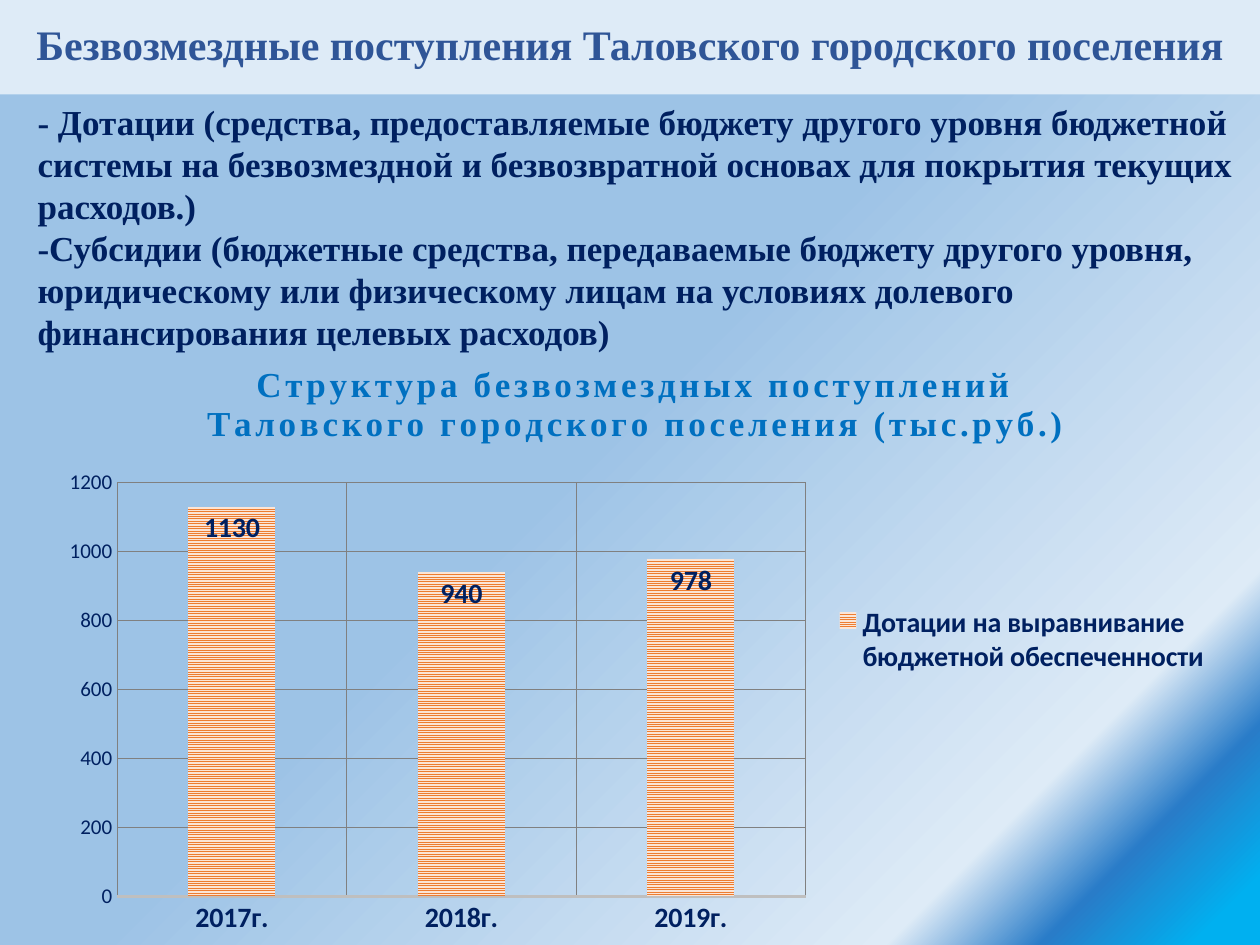
"""Build the slide on grants received by the Talovskoye town settlement."""
from lxml.etree import SubElement as Sub
from pptx import Presentation
from pptx.chart.data import CategoryChartData as Data
from pptx.dml.color import RGBColor as RGB
from pptx.enum.chart import XL_CHART_TYPE as Kind, XL_LABEL_POSITION as Spot
from pptx.enum.chart import XL_LEGEND_POSITION as Side, XL_TICK_MARK as Tick
from pptx.enum.dml import MSO_PATTERN_TYPE as Pat
from pptx.enum.text import MSO_ANCHOR as Anchor, PP_ALIGN as Align
from pptx.oxml import parse_xml
from pptx.oxml.ns import nsdecls, qn
from pptx.util import Inches, Pt

HEAD = "Безвозмездные поступления Таловского городского поселения"
TERMS = [
    "- Дотации (средства, предоставляемые бюджету другого уровня бюджетной системы "
    "на безвозмездной и безвозвратной основах для покрытия текущих расходов.)",
    "-Субсидии (бюджетные средства, передаваемые бюджету другого уровня, "
    "юридическому или физическому лицам на условиях долевого финансирования "
    "целевых расходов)",
]
CAPTION = ("Структура безвозмездных поступлений Таловского городского поселения "
           "(тыс.руб.)")
YEARS = ["2017г.", "2018г.", "2019г."]
SERIES = "Дотации на выравнивание бюджетной обеспеченности"
SUMS = [1130, 940, 978]
HUES = {"band": "DEEBF7", "head": "2F5597", "navy": "002060", "title": "0070C0",
        "bar": "ED7D31", "pale": "FBE5D6", "grid": "808080", "axis": "BFBFBF",
        "black": "000000"}
STOPS = [(3, "00B0F0"), (10, "297CC8"), (17, "DEEBF7"), (53, "9DC3E6"),
         (96, "9DC3E6")]
PLOT = {"x": 0.06, "y": 0.24, "w": 0.585, "h": 0.68}
SERIF, SANS = "Times New Roman", "Calibri"


def hue(key):
    return RGB.from_string(HUES[key])


def style(font, size, key="navy", face=SANS, bold=False):
    font.size, font.name, font.bold = Pt(size), face, bold
    font.color.rgb = hue(key)


def write(frame, text, align=Align.LEFT, space=None, **look):
    frame.word_wrap = True
    para = frame.paragraphs[0]
    para.text, para.alignment, para.line_spacing = text, align, space
    for run in para.runs:
        style(run.font, **look)


def place(shape, *box):
    shape.left, shape.top, shape.width, shape.height = map(Inches, box)


def rule(line, key, width):
    line.color.rgb, line.width = hue(key), Pt(width)


def paint(slide):
    slide.background.fill.solid()
    old = slide.background.fill._xPr.find(qn("a:solidFill"))
    stops = "".join(f'<a:gs pos="{pos * 1000}"><a:srgbClr val="{val}"/></a:gs>'
                    for pos, val in STOPS)
    new = parse_xml(f'<a:gradFill {nsdecls("a")}><a:gsLst>{stops}</a:gsLst>'
                    '<a:lin ang="13500000" scaled="0"/></a:gradFill>')
    old.getparent().replace(old, new)


def fix(plot):
    area = plot._element.getparent()
    for old in area.findall(qn("c:layout")):
        area.remove(old)
    layout = parse_xml(f'<c:layout {nsdecls("c")}/>')
    manual = Sub(layout, qn("c:manualLayout"))
    parts = {"layoutTarget": "inner", "xMode": "edge", "yMode": "edge", **PLOT}
    for tag, val in parts.items():
        Sub(manual, qn(f"c:{tag}")).set("val", str(val))
    area.insert(0, layout)


def draw(slide):
    data = Data()
    data.categories = YEARS
    data.add_series(SERIES, SUMS)
    box = map(Inches, (0.37, 2.67, 9.34, 4.83))
    chart = slide.shapes.add_chart(Kind.COLUMN_CLUSTERED, *box, data).chart
    style(chart.font, 10, "black")
    chart.has_title = True
    title = chart.chart_title
    write(title.text_frame, CAPTION, align=Align.CENTER, size=20, key="title",
          face=SERIF, bold=True)
    title.text_frame.paragraphs[0].runs[0].font._element.set("spc", "200")
    title.include_in_layout = False

    chart.has_legend = True
    chart.legend.position = Side.RIGHT
    chart.legend.include_in_layout = False
    style(chart.legend.font, 16, bold=True)

    cat, val = chart.category_axis, chart.value_axis
    for axis, size, bold in ((cat, 16, True), (val, 12, False)):
        axis.major_tick_mark = axis.minor_tick_mark = Tick.NONE
        axis.has_major_gridlines = True
        rule(axis.major_gridlines.format.line, "grid", 0.75)
        style(axis.tick_labels.font, size, bold=bold)
    rule(cat.format.line, "axis", 1.5)
    val.format.line.fill.background()
    val.minimum_scale, val.maximum_scale, val.major_unit = 0, 1200, 200

    plot = chart.plots[0]
    plot.gap_width, plot.overlap, plot.vary_by_categories = 164, -22, False
    fix(plot)
    bars = plot.series[0]
    fill = bars.format.fill
    fill.patterned()
    fill.pattern = Pat.NARROW_HORIZONTAL
    fill.fore_color.rgb, fill.back_color.rgb = hue("bar"), hue("pale")
    labels = bars.data_labels
    labels.show_value, labels.position = True, Spot.INSIDE_END
    style(labels.font, 16, bold=True)


def main():
    deck = Presentation()
    deck.slide_width, deck.slide_height = Inches(10), Inches(7.5)
    slide = deck.slides.add_slide(deck.slide_layouts[5])
    paint(slide)

    head = slide.shapes.title
    place(head, 0, 0, 10, 0.75)
    head.fill.solid()
    head.fill.fore_color.rgb = hue("band")
    head.text_frame.vertical_anchor = Anchor.MIDDLE
    write(head.text_frame, HEAD, align=Align.CENTER, space=0.9, size=24,
          key="head", face=SERIF, bold=True)

    body = slide.shapes.add_textbox(*map(Inches, (0.2, 0.75, 9.8, 2.12)))
    write(body.text_frame, "\v".join(TERMS), size=20, face=SERIF, bold=True)
    draw(slide)
    deck.save("out.pptx")


if __name__ == "__main__":
    main()
